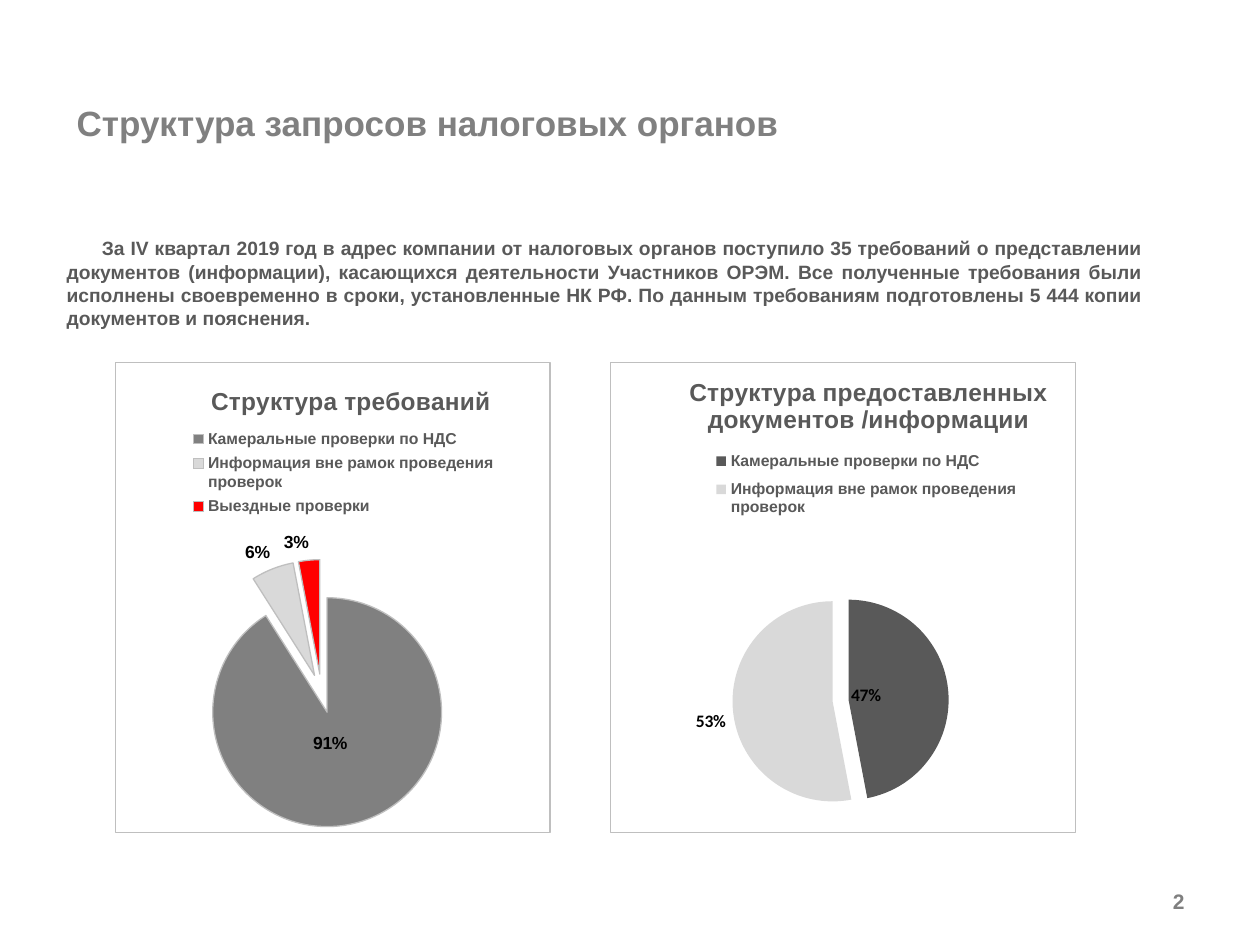
from dataclasses import dataclass

from lxml import etree
from pptx import Presentation
from pptx.chart.data import CategoryChartData
from pptx.dml.color import RGBColor
from pptx.enum.chart import XL_CHART_TYPE, XL_LABEL_POSITION, XL_LEGEND_POSITION
from pptx.enum.text import MSO_ANCHOR, PP_ALIGN
from pptx.oxml import parse_xml
from pptx.oxml.ns import nsdecls, qn
from pptx.util import Inches, Pt

COLORS = {
    "heading": "808080",
    "text": "595959",
    "number": "7F7F7F",
    "border": "BFBFBF",
    "light": "D9D9D9",
    "red": "FF0000",
    "black": "000000",
}
CENTER = XL_LABEL_POSITION.CENTER
OUTSIDE = XL_LABEL_POSITION.OUTSIDE_END
CHART_TOP, CHART_HEIGHT = 2.87, 3.74


@dataclass
class Slice:
    name: str
    percent: int
    color: str
    label_position: XL_LABEL_POSITION
    label_shift: tuple = ()


@dataclass
class Pie:
    title: str
    left: float
    width: float
    slices: list
    explosion: int
    label_font: str
    outlined: bool
    title_at: tuple
    legend_at: tuple
    plot_at: tuple


@dataclass
class Caption:
    text: str
    box: tuple
    size: float
    color: str
    align: PP_ALIGN = PP_ALIGN.LEFT
    anchor: MSO_ANCHOR = MSO_ANCHOR.TOP
    indent: float = 0


VAT = "Камеральные проверки по НДС"
OTHER = "Информация вне рамок проведения проверок"

PIES = [
    Pie("Структура требований", 0.91, 3.46,
        [Slice(VAT, 91, "heading", CENTER, (-0.03, -0.05)),
         Slice(OTHER, 6, "light", OUTSIDE),
         Slice("Выездные проверки", 3, "red", OUTSIDE)],
        17, "Arial", True, (0.21, 0.04), (0.15, 0.13, 0.75, 0.21),
        (0.02, 0.42, 0.91, 0.57)),
    Pie("Структура предоставленных документов /информации", 4.84, 3.7,
        [Slice(VAT, 47, "text", CENTER, (-0.07, 0)),
         Slice(OTHER, 53, "light", OUTSIDE)],
        8, "Calibri", False, (0.16, 0.02), (0.19, 0.17, 0.72, 0.18),
        (0.08, 0.49, 0.83, 0.46)),
]

CAPTIONS = [
    Caption("Структура запросов налоговых органов", (0.51, 0.76, 8.74, 0.74),
            20, "heading"),
    Caption("За IV квартал 2019 год в адрес компании от налоговых органов "
            "поступило 35 требований о представлении документов (информации), "
            "касающихся деятельности Участников ОРЭМ. Все полученные требования "
            "были исполнены своевременно в сроки, установленные НК РФ. По данным "
            "требованиям подготовлены 5 444 копии документов и пояснения.",
            (0.43, 1.62, 8.74, 1.25), 11, "text", PP_ALIGN.JUSTIFY,
            MSO_ANCHOR.MIDDLE, 0.28),
    Caption("2", (7.17, 6.95, 2.33, 0.4), 12, "number", PP_ALIGN.RIGHT,
            MSO_ANCHOR.MIDDLE),
]


def rgb(name: str) -> RGBColor:
    return RGBColor.from_string(COLORS[name])


def style(font, size: float, color: str, name: str = "Arial") -> None:
    font.size, font.bold, font.name = Pt(size), True, name
    font.color.rgb = rgb(color)


def add_caption(slide, caption: Caption) -> None:
    frame = slide.shapes.add_textbox(*map(Inches, caption.box)).text_frame
    frame.word_wrap = True
    frame.vertical_anchor = caption.anchor
    paragraph = frame.paragraphs[0]
    paragraph.alignment = caption.align
    if caption.indent:
        paragraph._p.get_or_add_pPr().set("indent", str(Inches(caption.indent)))
    run = paragraph.add_run()
    run.text = caption.text
    style(run.font, caption.size, caption.color)


def manual_layout(values: tuple, from_edge: bool = True, inner: bool = False):
    """Build a chart layout from x, y and, if given, width and height."""
    layout = parse_xml(f"<c:layout {nsdecls('c')}><c:manualLayout/></c:layout>")
    settings = [("layoutTarget", "inner")] if inner else []
    if from_edge:
        settings += [("xMode", "edge"), ("yMode", "edge")]
    settings += zip("xywh", values)
    for tag, value in settings:
        etree.SubElement(layout[0], qn(f"c:{tag}")).set("val", str(value))
    return layout


def place(parent, layout, after: str = "") -> None:
    for old in parent.findall(qn("c:layout")):
        parent.remove(old)
    if after:
        parent.find(qn(after)).addnext(layout)
    else:
        parent.insert(0, layout)


def draw_slice(series, index: int, part: Slice, pie: Pie) -> None:
    point = series.points[index]
    point.format.fill.solid()
    point.format.fill.fore_color.rgb = rgb(part.color)
    if pie.outlined:
        point.format.line.color.rgb = rgb("border")
        point.format.line.width = Pt(0.75)
    else:
        point.format.line.fill.background()
    label = point.data_label
    style(label.font, 10, "black", pie.label_font)
    label.position = part.label_position
    element = series._element.xpath(f"c:dLbls/c:dLbl[c:idx/@val='{index}']")[0]
    element.find(qn("c:showVal")).set("val", "0")
    element.find(qn("c:showPercent")).set("val", "1")
    if part.label_shift:
        place(element, manual_layout(part.label_shift, from_edge=False), "c:idx")


def add_pie(slide, pie: Pie) -> None:
    data = CategoryChartData()
    data.categories = [part.name for part in pie.slices]
    data.add_series("Series 1", [part.percent for part in pie.slices])
    box = (pie.left, CHART_TOP, pie.width, CHART_HEIGHT)
    chart = slide.shapes.add_chart(
        XL_CHART_TYPE.PIE, *map(Inches, box), data).chart
    style(chart.font, 10, "text", pie.label_font)

    # Frame and plot area
    chart._chartSpace.find(qn("c:chart")).addnext(parse_xml(
        f"<c:spPr {nsdecls('c', 'a')}><a:noFill/><a:ln w='{Pt(0.75)}'><a:solidFill>"
        f"<a:srgbClr val='{COLORS['border']}'/></a:solidFill></a:ln></c:spPr>"))
    plot_area = chart._chartSpace.chart.plotArea
    place(plot_area, manual_layout(pie.plot_at, inner=True))

    # Title
    title = chart.chart_title
    run = title.text_frame.paragraphs[0].add_run()
    run.text = pie.title
    style(run.font, 14, "text")
    place(title._element, manual_layout(pie.title_at), "c:tx")

    # Legend
    chart.has_legend = True
    legend = chart.legend
    legend.position = XL_LEGEND_POSITION.TOP
    legend.include_in_layout = False
    style(legend.font, 9, "text")
    place(legend._element, manual_layout(pie.legend_at), "c:legendPos")

    # Slices and percent labels
    plot = chart.plots[0]
    plot.vary_by_categories = True
    series = plot.series[0]
    labels = series.data_labels
    labels.show_percentage, labels.show_value = True, False
    style(labels.font, 10, "black", pie.label_font)
    shape_format = series._element.get_or_add_spPr()
    shape_format.addnext(parse_xml(
        f"<c:explosion {nsdecls('c')} val='{pie.explosion}'/>"))
    for index, part in enumerate(pie.slices):
        draw_slice(series, index, part, pie)


def main() -> None:
    deck = Presentation()
    deck.slide_width, deck.slide_height = Inches(10), Inches(7.5)
    slide = deck.slides.add_slide(deck.slide_layouts[6])
    for caption in CAPTIONS:
        add_caption(slide, caption)
    for pie in PIES:
        add_pie(slide, pie)
    deck.save("out.pptx")


if __name__ == "__main__":
    main()
